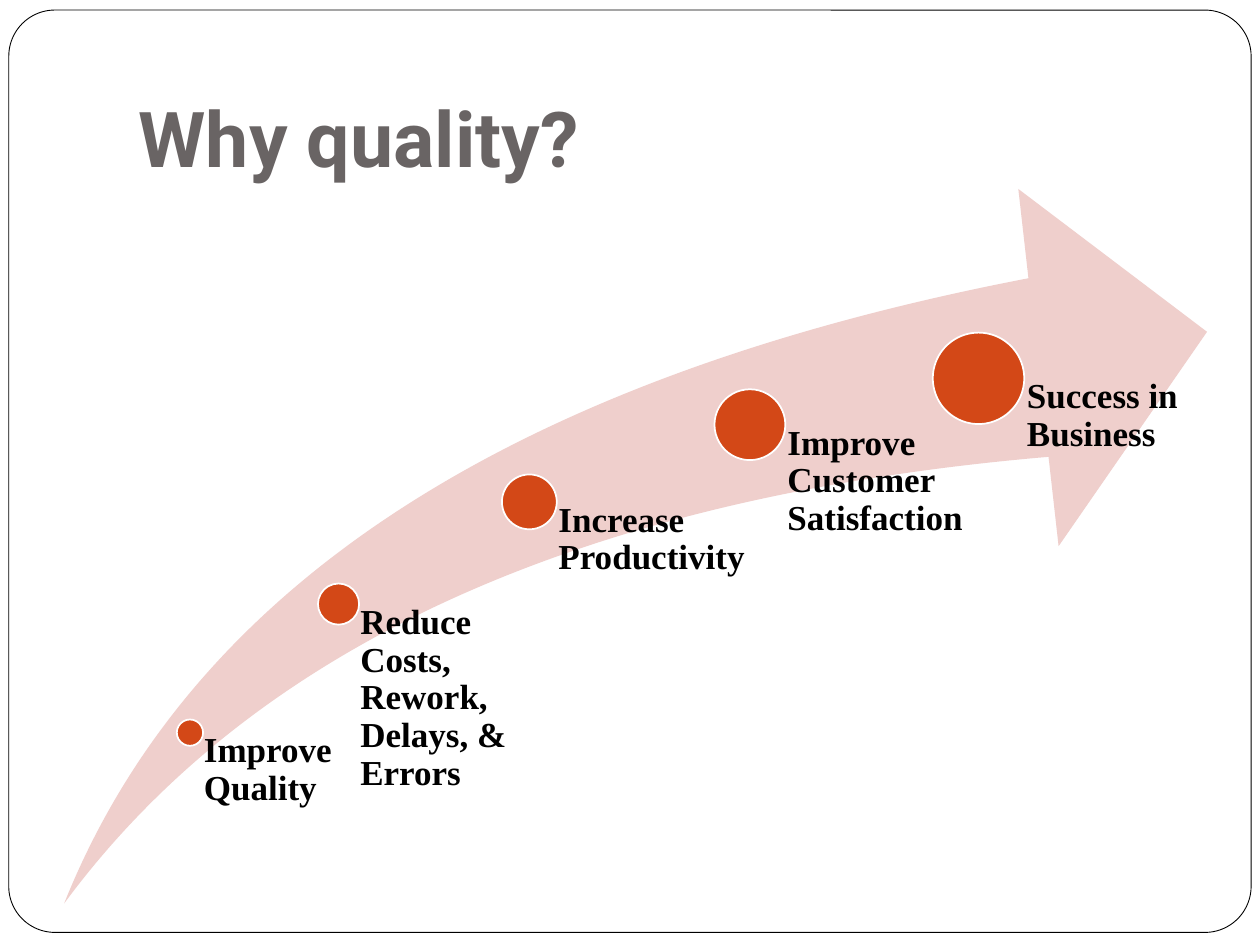
import pptx
import pptx.dml.color
import pptx.enum.shapes
import pptx.enum.text
import pptx.util

Inches = pptx.util.Inches
Pt = pptx.util.Pt
Shape = pptx.enum.shapes.MSO_SHAPE
Align = pptx.enum.text.PP_ALIGN
Anchor = pptx.enum.text.MSO_ANCHOR


def colour(value):
    return pptx.dml.color.RGBColor.from_string(value)


def add_filled(page, kind, bounds, fill, line=None, weight=1):
    shape = page.shapes.add_shape(kind, *map(Inches, bounds))
    shape.shadow.inherit = False
    shape.fill.solid()
    shape.fill.fore_color.rgb = colour(fill)
    if line:
        shape.line.color.rgb = colour(line)
        shape.line.width = Pt(weight)
    else:
        shape.line.fill.background()
    return shape


deck = pptx.Presentation()
deck.slide_width, deck.slide_height = Inches(10), Inches(7.5)
page = deck.slides.add_slide(deck.slide_layouts[5])

title = page.shapes.title
title.left, title.top = Inches(1), Inches(0.3)
title.width, title.height = Inches(8.5), Inches(1.25)
title.text = "Why quality?"
frame = title.text_frame
frame.word_wrap = True
frame.vertical_anchor = Anchor.BOTTOM
frame.margin_left = frame.margin_right = frame.margin_bottom = Inches(0.1)
frame.margin_top = Inches(0.05)
para = frame.paragraphs[0]
para.alignment = Align.LEFT
para.font.name, para.font.size, para.font.bold = "Roboto", Pt(44), True
para.font.color.rgb = colour("696464")

border = add_filled(page, Shape.ROUNDED_RECTANGLE, (0.07, 0.08, 9.86, 7.32), "FFFFFF", "000000", 0.5)
border.adjustments[0] = 0.05
title.element.addprevious(border.element)

left, top, width, height = 0.51, 1.5, 9.07, 5.67
arrow = add_filled(page, Shape.SWOOSH_ARROW, (left, top, width, height), "EFCFCC")
arrow.adjustments[0] = arrow.adjustments[1] = 0.25

# percent_of_arrow = "label, centre x, centre y, dot size, label width"
steps = [
    ("Improve Quality", 11, 76.1, 2.3, 13.1),
    ("Reduce Costs, Rework, Delays, & Errors", 24, 58.1, 3.6, 16.6),
    ("Increase Productivity", 40.7, 43.8, 4.8, 19.3),
    ("Improve Customer Satisfaction", 60, 33, 6.2, 20),
    ("Success in Business", 80, 26.5, 8, 20),
]
for label, across, down, size, span in steps:
    x = left + width * across / 100
    y = top + height * down / 100
    dot = width * size / 100
    add_filled(page, Shape.OVAL, (x - dot / 2, y - dot / 2, dot, dot), "D34817", "FFFFFF")

    box = page.shapes.add_textbox(Inches(x), Inches(y), Inches(width * span / 100), Inches(top + height - y))
    frame = box.text_frame
    frame.word_wrap = True
    frame.margin_left = Inches(dot * 0.53)
    frame.margin_top = frame.margin_right = frame.margin_bottom = 0
    para = frame.paragraphs[0]
    para.text = label
    para.line_spacing = 0.9
    para.space_after = Pt(7)
    para.font.name, para.font.size, para.font.bold = "Times New Roman", Pt(20), True
    para.font.color.rgb = colour("000000")

deck.save("out.pptx")
